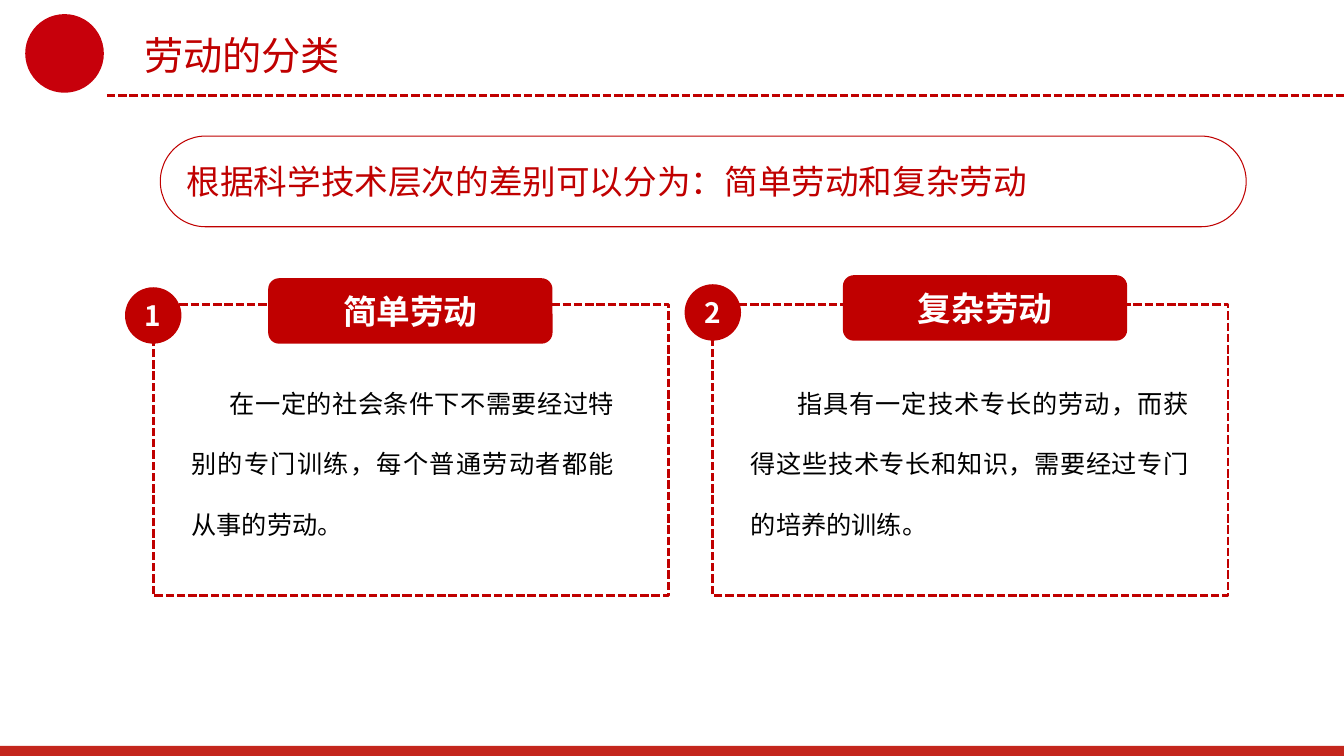
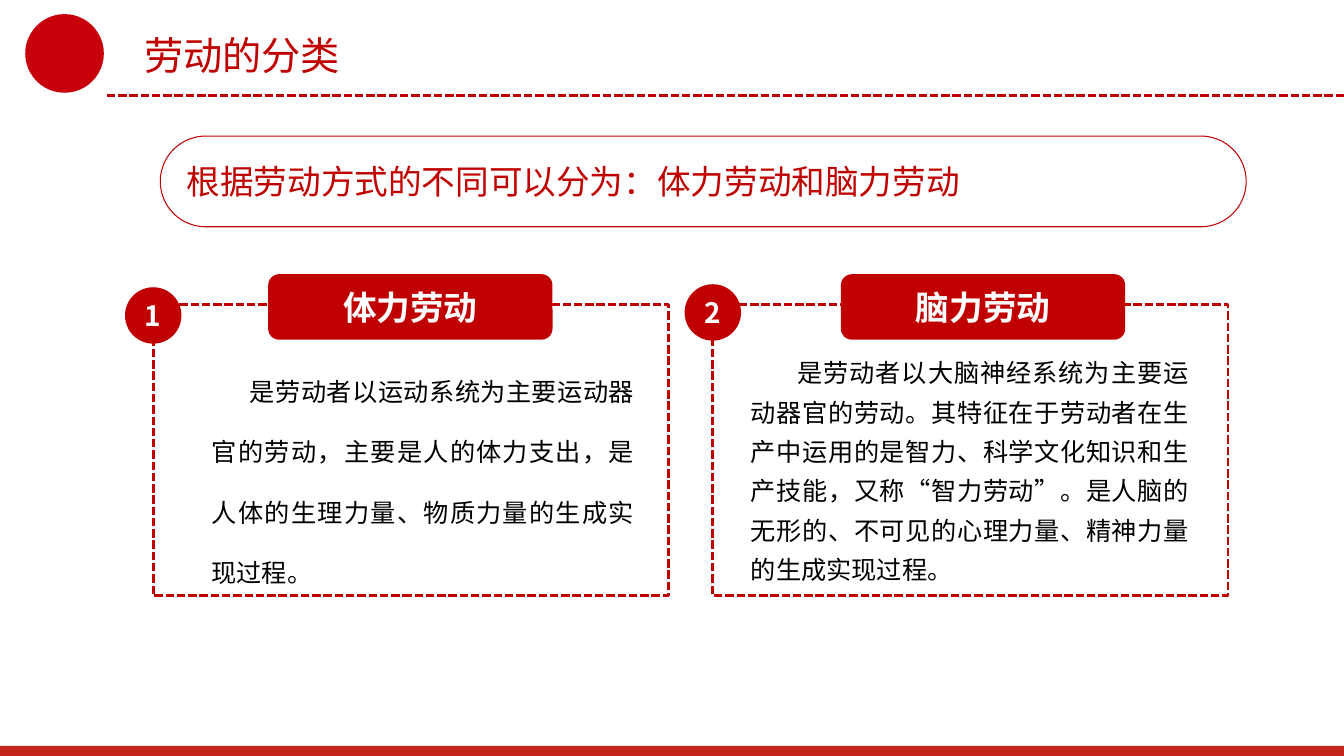
from dataclasses import dataclass

from lxml import etree
from pptx import Presentation
from pptx.dml.color import RGBColor
from pptx.enum.dml import MSO_LINE
from pptx.enum.shapes import MSO_CONNECTOR, MSO_SHAPE
from pptx.enum.text import MSO_ANCHOR, PP_ALIGN
from pptx.oxml.ns import qn
from pptx.util import Inches, Pt


@dataclass(frozen=True)
class Theme:
    font: str = "Noto Sans CJK SC"
    red: RGBColor = RGBColor(0xC0, 0x00, 0x00)
    emblem: RGBColor = RGBColor(0xC7, 0x00, 0x0B)
    band: RGBColor = RGBColor(0xC4, 0x26, 0x1D)
    white: RGBColor = RGBColor(0xFF, 0xFF, 0xFF)
    black: RGBColor = RGBColor(0x00, 0x00, 0x00)
    title_size: int = 28
    heading_size: int = 24
    badge_size: int = 20
    body_size: int = 18
    dash_width: float = 2
    thin_width: float = 0.75


@dataclass(frozen=True)
class Card:
    """A numbered card; every offset is measured from its frame's corner."""
    heading: str
    body: str
    heading_offset: tuple
    badge_top: float
    body_box: tuple
    indent: float
    line_spacing: float = 2.0


THEME = Theme()
SLIDE_WIDTH, SLIDE_HEIGHT = 13.33, 7.5
TITLE_BOX = (1.33, 0.26, 8, 0.57)
BANNER_BOX = (1.59, 1.35, 10.77, 0.9)
CARD_TOP, CARD_WIDTH, CARD_HEIGHT = 3.02, 5.11, 2.89
CARD_LEFT, CARD_GAP = 1.52, 0.44
BADGE_DIAMETER = 0.56
HEADING_WIDTH, HEADING_HEIGHT = 2.82, 0.65


def inches(*lengths):
    return [Inches(length) for length in lengths]


def write_text(shape, text, *, size, color, bold=False, align=PP_ALIGN.LEFT,
               anchor=MSO_ANCHOR.MIDDLE, indent=0, line_spacing=None):
    frame = shape.text_frame
    frame.word_wrap = True
    frame.vertical_anchor = anchor
    paragraph = frame.paragraphs[0]
    paragraph.alignment = align
    if line_spacing:
        paragraph.line_spacing = line_spacing
    if indent:
        paragraph._p.get_or_add_pPr().set("indent", str(Inches(indent)))
    run = paragraph.add_run()
    run.text = text
    run.font.size = Pt(size)
    run.font.bold = bold
    run.font.color.rgb = color
    run.font.name = THEME.font
    # East Asian glyphs need their own typeface entry
    etree.SubElement(run.font._element, qn("a:ea")).set("typeface", THEME.font)
    return frame


def style_line(line, width, dashed=False):
    line.color.rgb = THEME.red
    line.width = Pt(width)
    if dashed:
        line.dash_style = MSO_LINE.SQUARE_DOT


def add_shape(slide, preset, box, fill=None):
    shape = slide.shapes.add_shape(preset, *inches(*box))
    shape.shadow.inherit = False
    if fill is None:
        shape.fill.background()
    else:
        shape.fill.solid()
        shape.fill.fore_color.rgb = fill
        shape.line.fill.background()
    return shape


def add_page_frame(slide, title):
    # Plain emblem, dashed rule and bottom band
    add_shape(slide, MSO_SHAPE.OVAL, (0.25, 0.14, 0.78, 0.78), THEME.emblem)
    rule = slide.shapes.add_connector(
        MSO_CONNECTOR.STRAIGHT, *inches(1.06, 0.95, SLIDE_WIDTH, 0.95))
    style_line(rule.line, THEME.dash_width, dashed=True)
    etree.SubElement(rule._element.spPr, qn("a:effectLst"))
    add_shape(slide, MSO_SHAPE.RECTANGLE,
              (0, SLIDE_HEIGHT - 0.1, SLIDE_WIDTH, 0.1), THEME.band)

    # Title, with room to stay on one line
    placeholder = slide.shapes.title
    placeholder.left, placeholder.top, placeholder.width, placeholder.height = (
        inches(*TITLE_BOX))
    write_text(placeholder, title, size=THEME.title_size, color=THEME.red,
               anchor=MSO_ANCHOR.TOP)


def add_banner(slide, box, text):
    banner = add_shape(slide, MSO_SHAPE.ROUNDED_RECTANGLE, box)
    banner.adjustments[0] = 0.5
    style_line(banner.line, THEME.thin_width)
    frame = write_text(banner, text, size=THEME.heading_size, color=THEME.red)
    frame.margin_left = frame.margin_right = Inches(0.13)
    frame.margin_top = frame.margin_bottom = Inches(0.07)


def add_card(slide, box, number, card):
    left, top = box[:2]

    # Dashed frame
    outline = add_shape(slide, MSO_SHAPE.RECTANGLE, box)
    style_line(outline.line, THEME.dash_width, dashed=True)

    # Number badge, centred on the left edge
    badge = add_shape(slide, MSO_SHAPE.OVAL,
                      (left - BADGE_DIAMETER / 2, top + card.badge_top,
                       BADGE_DIAMETER, BADGE_DIAMETER), THEME.red)
    write_text(badge, str(number), size=THEME.badge_size, color=THEME.white,
               bold=True, align=PP_ALIGN.CENTER)

    # Body text
    body_left, body_top, body_width, body_height = card.body_box
    body = slide.shapes.add_textbox(
        *inches(left + body_left, top + body_top, body_width, body_height))
    write_text(body, card.body, size=THEME.body_size, color=THEME.black,
               align=PP_ALIGN.JUSTIFY, anchor=MSO_ANCHOR.TOP,
               indent=card.indent, line_spacing=card.line_spacing)

    # Heading tab over the top edge
    heading_left, heading_top = card.heading_offset
    heading = add_shape(slide, MSO_SHAPE.ROUNDED_RECTANGLE,
                        (left + heading_left, top + heading_top,
                         HEADING_WIDTH, HEADING_HEIGHT), THEME.red)
    write_text(heading, card.heading, size=THEME.heading_size, color=THEME.white,
               bold=True, align=PP_ALIGN.CENTER)


def add_classification_slide(presentation, banner, cards):
    slide = presentation.slides.add_slide(presentation.slide_layouts[5])
    add_page_frame(slide, "劳动的分类")
    add_banner(slide, BANNER_BOX, banner)
    for index, card in enumerate(cards):
        left = CARD_LEFT + index * (CARD_WIDTH + CARD_GAP)
        add_card(slide, (left, CARD_TOP, CARD_WIDTH, CARD_HEIGHT), index + 1, card)


SLIDES = [
    ("根据科学技术层次的差别可以分为：简单劳动和复杂劳动", [
        Card("简单劳动",
             "在一定的社会条件下不需要经过特别的专门训练，每个普通劳动者都能从事的劳动。",
             heading_offset=(1.14, -0.26), badge_top=-0.17,
             body_box=(0.28, 0.48, 4.39, 1.92), indent=0.38),
        Card("复杂劳动",
             "指具有一定技术专长的劳动，而获得这些技术专长和知识，需要经过专门的培养的训练。",
             heading_offset=(1.29, -0.29), badge_top=-0.2,
             body_box=(0.28, 0.48, 4.54, 1.92), indent=0.46),
    ]),
    ("根据劳动方式的不同可以分为：体力劳动和脑力劳动", [
        Card("体力劳动",
             "是劳动者以运动系统为主要运动器官的劳动，主要是人的体力支出，"
             "是人体的生理力量、物质力量的生成实现过程。",
             heading_offset=(1.14, -0.3), badge_top=-0.17,
             body_box=(0.48, 0.36, 4.39, 2.52), indent=0.38),
        Card("脑力劳动",
             "是劳动者以大脑神经系统为主要运动器官的劳动。其特征在于劳动者在生产中"
             "运用的是智力、科学文化知识和生产技能，又称“智力劳动”。"
             "是人脑的无形的、不可见的心理力量、精神力量的生成实现过程。",
             heading_offset=(1.27, -0.3), badge_top=-0.2,
             body_box=(0.28, 0.39, 4.54, 2.46), indent=0.46, line_spacing=1.3),
    ]),
]


def main():
    presentation = Presentation()
    presentation.slide_width, presentation.slide_height = inches(
        SLIDE_WIDTH, SLIDE_HEIGHT)
    for banner, cards in SLIDES:
        add_classification_slide(presentation, banner, cards)
    presentation.save("out.pptx")


if __name__ == "__main__":
    main()
